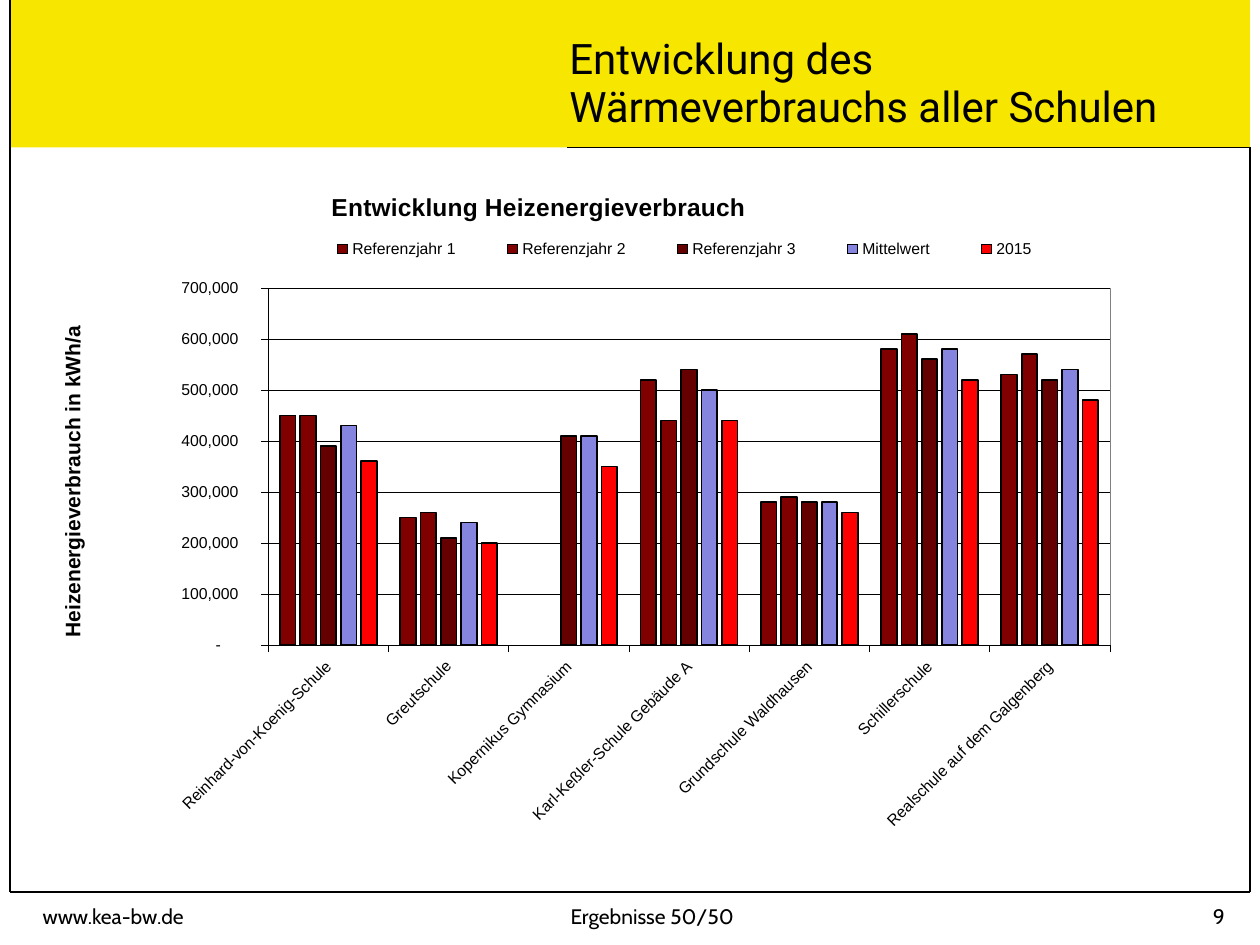
import pptx
import pptx.chart.data
import pptx.dml.color
import pptx.enum.chart
import pptx.enum.shapes
import pptx.enum.text
import pptx.oxml
import pptx.oxml.ns
import pptx.util
from pptx.util import Inches, Pt

BLACK = "000000"
YELLOW = "F6E600"
SCHOOLS = [
    "Reinhard-von-Koenig-Schule", "Greutschule", "Kopernikus Gymnasium",
    "Karl-Keßler-Schule Gebäude A", "Grundschule Waldhausen",
    "Schillerschule", "Realschule auf dem Galgenberg",
]
SERIES = [
    ("Referenzjahr 1", "800000", [450000, 250000, None, 520000, 280000, 580000, 530000]),
    ("Referenzjahr 2", "800000", [450000, 260000, None, 440000, 290000, 610000, 570000]),
    ("Referenzjahr 3", "640000", [390000, 210000, 410000, 540000, 280000, 560000, 520000]),
    ("Mittelwert", "8585E0", [430000, 240000, 410000, 500000, 280000, 580000, 540000]),
    ("2015", "FF0000", [360000, 200000, 350000, 440000, 260000, 520000, 480000]),
]
NUMBER_FORMAT = '_-* #,##0\\ _€_-;\\-* #,##0\\ _€_-;_-* "-"??\\ _€_-;_-@_-'


def color(hex_text):
    return pptx.dml.color.RGBColor.from_string(hex_text)


def set_font(font, name, size, bold=False):
    font.name = name
    font.size = Pt(size)
    font.bold = bold
    font.color.rgb = color(BLACK)


def set_line(line, width, hex_text=BLACK):
    line.color.rgb = color(hex_text)
    line.width = Pt(width)


def add_text(page, box, text, font_name, size, align="LEFT", spacing=None):
    frame = page.shapes.add_textbox(*map(Inches, box)).text_frame
    frame.word_wrap = True
    frame.text = text
    para = frame.paragraphs[0]
    para.alignment = getattr(pptx.enum.text.PP_ALIGN, align)
    para.line_spacing = spacing
    set_font(para.runs[0].font, font_name, size)


def add_rule(page, start, end):
    rule = page.shapes.add_connector(
        pptx.enum.shapes.MSO_CONNECTOR.STRAIGHT, *map(Inches, start + end))
    set_line(rule.line, 0.75)
    properties = rule._element.spPr
    properties.append(pptx.oxml.parse_xml(
        f"<a:effectLst {pptx.oxml.ns.nsdecls('a')}/>"))


def add_frame(page, box, band_height, rule_left):
    """Yellow header band and the thin rules around the content."""
    left, top, width, height = box
    right, bottom, band_bottom = left + width, top + height, top + band_height
    band = page.shapes.add_shape(
        pptx.enum.shapes.MSO_SHAPE.RECTANGLE,
        *map(Inches, (left, top, width, band_height)))
    band.shadow.inherit = False
    band.fill.solid()
    band.fill.fore_color.rgb = color(YELLOW)
    band.line.fill.background()
    add_rule(page, (rule_left, band_bottom), (right, band_bottom))
    add_rule(page, (left, top), (left, bottom))
    add_rule(page, (right, bottom), (left, bottom))
    add_rule(page, (right, bottom), (right, band_bottom))


def add_footer(page, top):
    add_text(page, (0.24, top, 3.17, 0.33), "www.kea-bw.de", "Cabin", 12)
    add_text(page, (4.43, top, 4.67, 0.28), "Ergebnisse 50/50", "Cabin", 12)
    add_text(page, (9.25, top, 0.57, 0.33), "9", "Cabin", 12, "RIGHT")


def place(element, index, x, y, width=None, height=None, inner=False):
    """Give a chart part a manual layout, in fractions of the chart."""
    for old in element.findall(pptx.oxml.ns.qn("c:layout")):
        element.remove(old)
    parts = ['<c:layoutTarget val="inner"/>'] if inner else []
    parts += ['<c:xMode val="edge"/>', '<c:yMode val="edge"/>']
    for tag, value in (("x", x), ("y", y), ("w", width), ("h", height)):
        if value is not None:
            parts.append(f'<c:{tag} val="{value}"/>')
    element.insert(index, pptx.oxml.parse_xml(
        f"<c:layout {pptx.oxml.ns.nsdecls('c')}><c:manualLayout>"
        f"{''.join(parts)}</c:manualLayout></c:layout>"))


def set_title(title, text, size, x, y):
    title.text_frame.text = text
    set_font(title.text_frame.paragraphs[0].runs[0].font, "Arial", size, True)
    place(title._element, 1, x, y)


def style_axes(chart):
    for axis in (chart.category_axis, chart.value_axis):
        set_font(axis.tick_labels.font, "Arial", 9)
        set_line(axis.format.line, 0.25)
        axis.major_tick_mark = pptx.enum.chart.XL_TICK_MARK.OUTSIDE
        axis.minor_tick_mark = pptx.enum.chart.XL_TICK_MARK.NONE
    chart.category_axis._element.find(
        ".//" + pptx.oxml.ns.qn("a:bodyPr")).set("rot", "-2700000")
    values = chart.value_axis
    values.minimum_scale, values.maximum_scale = 0, 700000
    values.major_unit = 100000
    values.tick_labels.number_format = NUMBER_FORMAT
    values.tick_labels.number_format_is_linked = False
    values.has_major_gridlines = True
    set_line(values.major_gridlines.format.line, 0.25)
    set_title(values.axis_title, "Heizenergieverbrauch in kWh/a", 12, 0.017, 0.22)
    values.axis_title._element.find(
        ".//" + pptx.oxml.ns.qn("a:bodyPr")).set("rot", "-5400000")


def style_plot(chart):
    plot = chart.plots[0]
    plot.gap_width, plot.overlap = 150, -30
    plot.vary_by_categories = False
    for series, (_, fill, _) in zip(plot.series, SERIES):
        series.invert_if_negative = False
        series.format.fill.solid()
        series.format.fill.fore_color.rgb = color(fill)
        set_line(series.format.line, 1)
    area = chart._chartSpace.chart.plotArea
    place(area, 0, 0.194, 0.172, 0.701, 0.5, inner=True)
    area.append(pptx.oxml.parse_xml(
        f"<c:spPr {pptx.oxml.ns.nsdecls('c', 'a')}>"
        '<a:solidFill><a:srgbClr val="FFFFFF"/></a:solidFill>'
        '<a:ln w="3175"><a:solidFill><a:srgbClr val="808080"/></a:solidFill></a:ln>'
        "</c:spPr>"))


def add_heating_chart(page, box):
    data = pptx.chart.data.CategoryChartData()
    data.categories = SCHOOLS
    for name, _, values in SERIES:
        data.add_series(name, values)
    chart = page.shapes.add_chart(
        pptx.enum.chart.XL_CHART_TYPE.COLUMN_CLUSTERED,
        *map(Inches, box), data).chart
    set_font(chart.font, "Arial", 10)
    chart.has_title = True
    set_title(chart.chart_title, "Entwicklung Heizenergieverbrauch", 14, 0.243, 0.03)
    chart.has_legend = True
    chart.legend.position = pptx.enum.chart.XL_LEGEND_POSITION.TOP
    chart.legend.include_in_layout = False
    set_font(chart.legend.font, "Arial", 9)
    place(chart.legend._element, 1, 0.213, 0.095, 0.656, 0.045)
    style_axes(chart)
    style_plot(chart)


def main():
    deck = pptx.Presentation()
    deck.slide_width, deck.slide_height = Inches(10), Inches(7.5)
    page = deck.slides.add_slide(deck.slide_layouts[6])
    add_frame(page, (0.08, 0, 9.84, 7.08), 1.17, 4.5)
    add_footer(page, 7.12)
    add_text(page, (4.42, 0.24, 5.25, 0.94),
             "Entwicklung des Wärmeverbrauchs aller Schulen",
             "Roboto", 24, spacing=0.95)
    add_heating_chart(page, (0.28, 1.31, 9.53, 5.67))
    deck.save("out.pptx")


if __name__ == "__main__":
    main()
